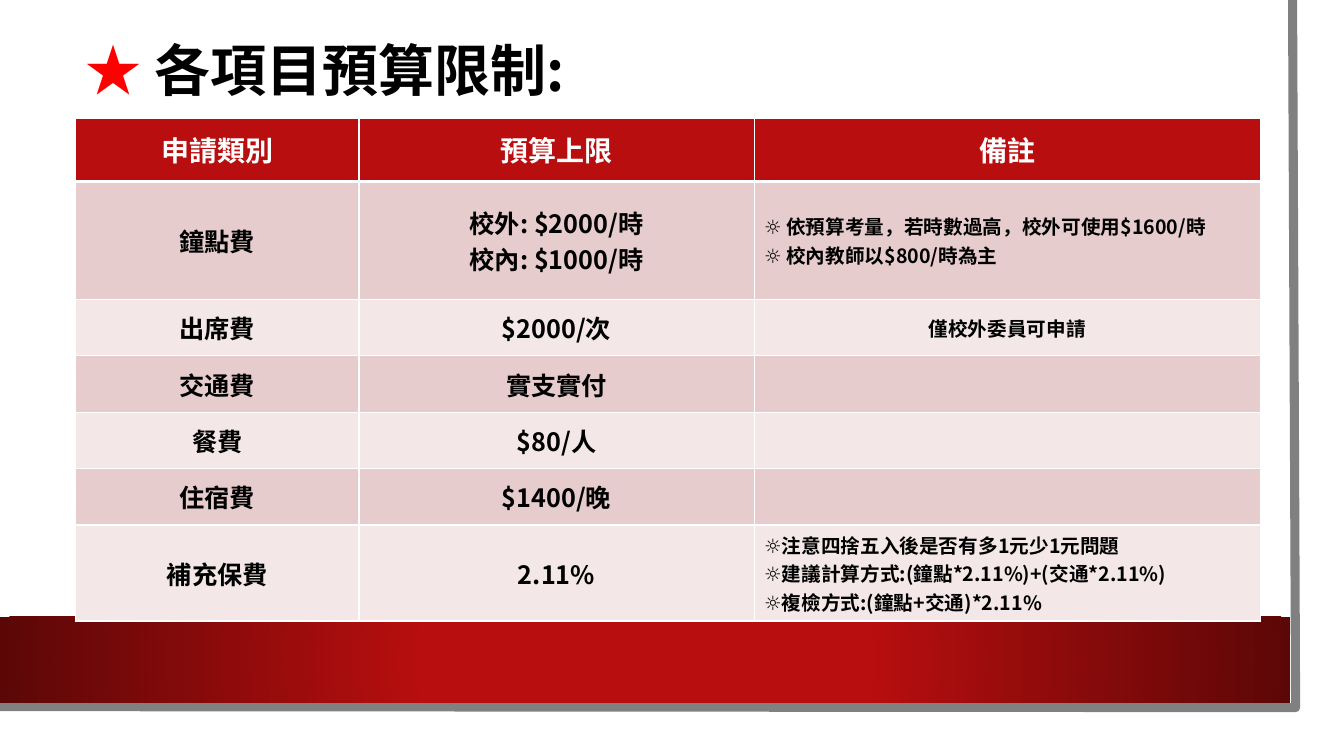
"""Build the slide listing the budget limit of each expense item."""
from dataclasses import dataclass

from lxml import etree
from pptx import Presentation
from pptx.dml.color import RGBColor as RGB
from pptx.enum.shapes import MSO_SHAPE as Shape
from pptx.enum.text import MSO_ANCHOR as Anchor, MSO_AUTO_SIZE as AutoSize, PP_ALIGN as Align
from pptx.oxml import parse_xml
from pptx.oxml.ns import nsdecls, qn
from pptx.util import Pt

PX = 9144


@dataclass(frozen=True)
class Theme:
    font: str = "Noto Sans CJK SC"
    symbol_font: str = "Cabin"
    white: str = "FFFFFF"
    black: str = "000000"
    star: str = "FF0000"
    red: str = "B80E0F"
    dark_red: str = "5C0707"
    frame: str = "808080"
    bands: tuple = ("E6CCCC", "F3E7E7")
    title_size: int = 40
    header_size: int = 20
    body_size: int = 18
    note_size: int = 14


class Deck:
    def __init__(self, theme, width, height):
        self.theme = theme
        self.prs = Presentation()
        self.prs.slide_width, self.prs.slide_height = width * PX, height * PX
        self.s = self.prs.slides.add_slide(self.prs.slide_layouts[5])

    def set_font(self, font, props, name):
        font.name = name
        etree.SubElement(props, qn("a:ea")).set("typeface", self.theme.font)

    def paragraph(self, p, content, size, color, align):
        p.alignment = align
        p.font.size, p.font.bold = Pt(size), True
        p.font.color.rgb = RGB.from_string(color)
        if isinstance(content, str):
            p.add_run().text = content
            self.set_font(p.font, p._p.pPr.find(qn("a:defRPr")), self.theme.font)
            return
        for text, name in zip(content, (self.theme.symbol_font, self.theme.font)):
            r = p.add_run()
            r.text = text
            self.set_font(r.font, r._r.get_or_add_rPr(), name)

    def frame(self, points, weight):
        start, *rest = points
        builder = self.s.shapes.build_freeform(*start, scale=PX)
        builder.add_line_segments(rest, close=False)
        sp = builder.convert_to_shape()
        sp.shadow.inherit = False
        sp.fill.background()
        sp.line.color.rgb = RGB.from_string(self.theme.frame)
        sp.line.width = Pt(weight)

    def band(self, *box):
        sp = self.s.shapes.add_shape(Shape.RECTANGLE, *(v * PX for v in box))
        sp.shadow.inherit = False
        sp.line.fill.background()
        sp.fill.gradient()
        grad = sp._element.spPr.find(qn("a:gradFill"))
        stops = "".join(
            f'<a:gs pos="{pos}000"><a:srgbClr val="{color}"/></a:gs>'
            for pos, color in ((34, self.theme.red), (100, self.theme.dark_red)))
        grad.getparent().replace(grad, parse_xml(
            f'<a:gradFill {nsdecls("a")}><a:gsLst>{stops}</a:gsLst><a:path path="circle">'
            '<a:fillToRect l="50000" t="50000" r="50000" b="50000"/></a:path></a:gradFill>'))

    def title(self, parts, *box):
        sp = self.s.shapes.title
        sp.left, sp.top, sp.width, sp.height = (v * PX for v in box)
        tf = sp.text_frame
        tf.auto_size, tf.vertical_anchor = AutoSize.NONE, Anchor.MIDDLE
        p = tf.paragraphs[0]
        p.alignment, p.line_spacing = Align.LEFT, 0.9
        p.font.size, p.font.bold = Pt(self.theme.title_size), True
        self.set_font(p.font, p._p.pPr.find(qn("a:defRPr")), self.theme.font)
        for text, color in parts:
            r = p.add_run()
            r.text = text
            r.font.color.rgb = RGB.from_string(color)

    def borders(self, cell, bottom):
        tc_pr = cell._tc.get_or_add_tcPr()
        for side, weight in zip("LRTB", (1, 1, 1, bottom)):
            tc_pr.append(parse_xml(
                f'<a:ln{side} {nsdecls("a")} w="{Pt(weight)}"><a:solidFill>'
                f'<a:srgbClr val="{self.theme.white}"/></a:solidFill></a:ln{side}>'))

    def cell(self, cell, paragraphs, fill, size, color, bottom):
        self.borders(cell, bottom)
        cell.fill.solid()
        cell.fill.fore_color.rgb = RGB.from_string(fill)
        cell.vertical_anchor = Anchor.MIDDLE
        tf = cell.text_frame
        for i, content in enumerate(paragraphs):
            p = tf.add_paragraph() if i else tf.paragraphs[0]
            align = Align.CENTER if isinstance(content, str) else Align.LEFT
            self.paragraph(p, content, size, color, align)

    def table(self, rows, left, top, widths, heights):
        t = self.theme
        table = self.s.shapes.add_table(
            len(rows), len(widths), left * PX, top * PX,
            sum(widths) * PX, sum(heights) * PX).table
        table.horz_banding = False
        for column, width in zip(table.columns, widths):
            column.width = width * PX
        for i, (row, height) in enumerate(zip(rows, heights)):
            table.rows[i].height = height * PX
            for j, paragraphs in enumerate(row):
                if i == 0:
                    style = t.red, t.header_size, t.white, 3
                else:
                    size = t.note_size if j == 2 else t.body_size
                    style = t.bands[(i - 1) % 2], size, t.black, 1
                self.cell(table.cell(i, j), paragraphs, *style)


ROWS = [
    (["申請類別"], ["預算上限"], ["備註"]),
    (["鐘點費"], ["校外: $2000/時", "校內: $1000/時"],
     [("☼ 依預算考量，", "若時數過高，校外可使用$1600/時"),
      ("☼ 校內教師以", "$800/時為主")]),
    (["出席費"], ["$2000/次"], ["僅校外委員可申請"]),
    (["交通費"], ["實支實付"], []),
    (["餐費"], ["$80/人"], []),
    (["住宿費"], ["$1400/晚"], []),
    (["補充保費"], ["2.11%"],
     [("☼", "注意四捨五入後是否有多1元少1元問題"),
      ("☼", "建議計算方式:(鐘點*2.11%)+(交通*2.11%)"),
      ("☼", "複檢方式:(鐘點+交通)*2.11%")]),
]


def main():
    theme = Theme()
    deck = Deck(theme, 1333, 750)
    deck.frame([(1282, 0), (1285, 702), (-3, 701)], 6.5)
    deck.band(0, 612, 1280, 85)
    deck.title([("★ ", theme.star), ("各項目預算限制:", theme.black)], 75, 18, 1137, 110)
    deck.table(ROWS, 75, 117, (281, 392, 502), (63, 117, *[56] * 4, 95))
    deck.prs.save("out.pptx")


if __name__ == "__main__":
    main()
